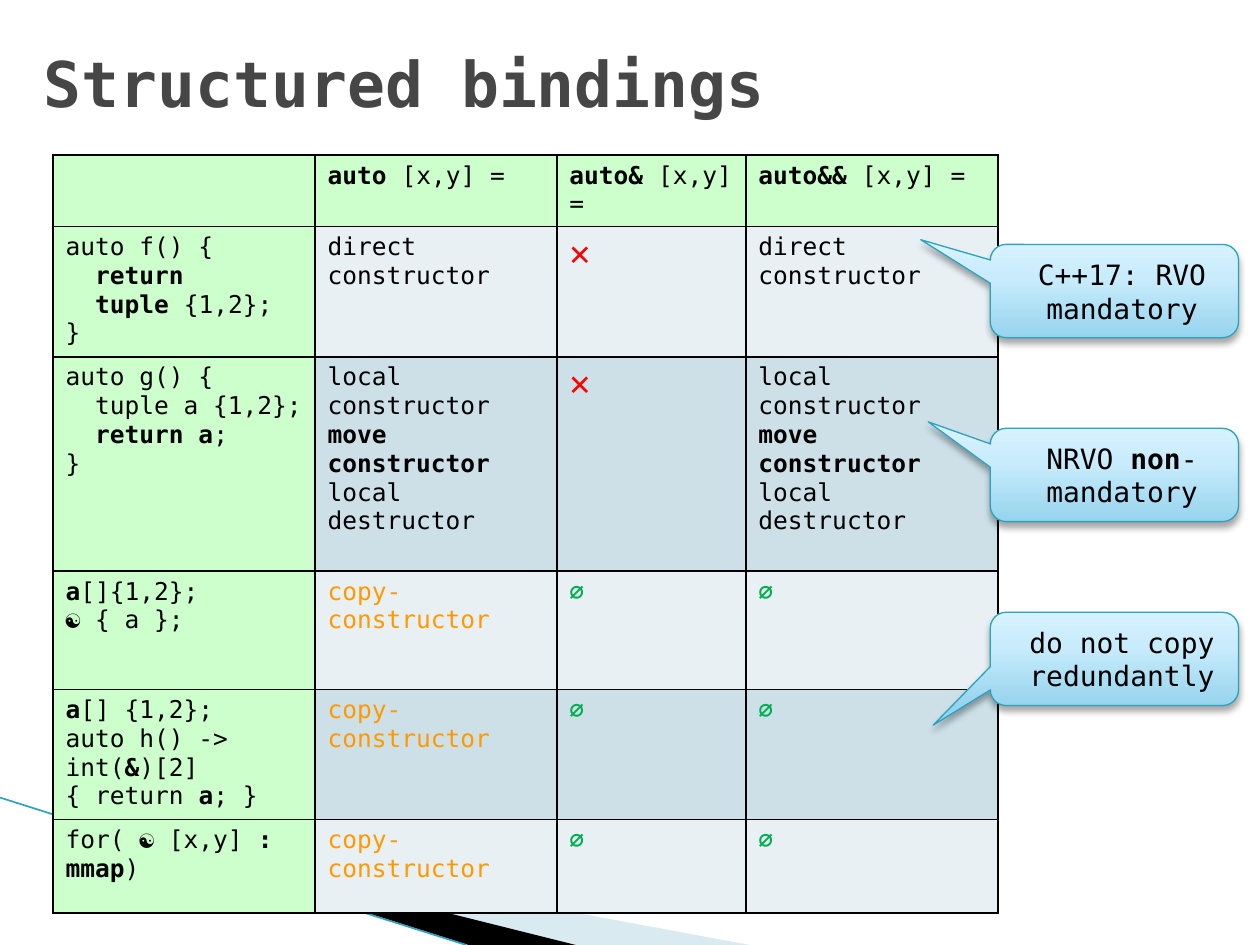
from dataclasses import dataclass

from lxml import etree
from pptx import Presentation
from pptx.dml.color import RGBColor as RGB
from pptx.enum.shapes import MSO_CONNECTOR as Link, MSO_SHAPE as Shape
from pptx.enum.text import MSO_ANCHOR as Anchor, PP_ALIGN as Align
from pptx.oxml import parse_xml
from pptx.oxml.ns import qn
from pptx.util import Inches, Pt

NS = 'xmlns:a="http://schemas.openxmlformats.org/drawingml/2006/main"'


@dataclass(frozen=True)
class Theme:
    face: str = "DejaVu Sans Mono"
    title: int = 36
    note: int = 16
    body: int = 14
    cross: int = 20
    black: str = "000000"
    gray: str = "464646"
    red: str = "FF0000"
    green: str = "00B050"
    orange: str = "FF9900"
    head: str = "CCFFCC"
    bands: tuple = ("E8F0F4", "CDE0E8")
    wave: str = "A0CBDC"
    rim: str = "2DA2BF"
    glow: tuple = ((0, "96D4EE"), (65, "C9ECFC"), (100, "D7F2FF"))


class Deck:
    def __init__(self, theme):
        self.theme = theme
        self.prs = Presentation()
        self.prs.slide_width, self.prs.slide_height = Inches(10), Inches(7.5)
        self.slide = self.prs.slides.add_slide(self.prs.slide_layouts[6])
        self.shapes = self.slide.shapes

    def label(self, frame, text, **form):
        """Fill a frame; *stars* mark bold, \\n a paragraph, \\v a line break."""
        base = {"name": self.theme.face, "size": Pt(self.theme.body)} | form
        tone = RGB.from_string(base.pop("tone", self.theme.black))
        for i, line in enumerate(text.split("\n")):
            para = frame.paragraphs[0] if i == 0 else frame.add_paragraph()
            for j, part in enumerate(line.split("*")):
                for k, piece in enumerate(part.split("\v")):
                    if k:
                        para.add_line_break()
                    if not piece:
                        continue
                    run = para.add_run()
                    run.text = piece
                    for key, val in ({"bold": j % 2 == 1} | base).items():
                        setattr(run.font, key, val)
                    run.font.color.rgb = tone

    def title(self, text, x, y, w, h):
        box = self.shapes.add_textbox(*map(Inches, (x, y, w, h)))
        frame = box.text_frame
        frame.word_wrap, frame.vertical_anchor = True, Anchor.MIDDLE
        self.label(frame, text, size=Pt(self.theme.title),
                   tone=self.theme.gray, bold=True)

    def patch(self, points, tone, alpha=100):
        """Draw a filled outline without a border."""
        spots = [(Inches(x), Inches(y)) for x, y in points]
        pen = self.shapes.build_freeform(*spots[0])
        pen.add_line_segments(spots[1:], close=True)
        shape = pen.convert_to_shape()
        shape.shadow.inherit = False
        shape.line.fill.background()
        shape.fill.solid()
        shape.fill.fore_color.rgb = RGB.from_string(tone)
        if alpha < 100:
            mark = shape._element.spPr.find(".//" + qn("a:srgbClr"))
            etree.SubElement(mark, qn("a:alpha"), val=str(alpha * 1000))

    def line(self, start, end, tone, width):
        link = self.shapes.add_connector(
            Link.STRAIGHT, *map(Inches, (*start, *end)))
        link.line.color.rgb = RGB.from_string(tone)
        link.line.width = Pt(width)
        etree.SubElement(link._element.spPr, qn("a:effectLst"))

    def rule(self, cell):
        """Put a thin border on each side of a cell."""
        props = cell._tc.get_or_add_tcPr()
        for side in "LRTB":
            props.append(parse_xml(
                f'<a:ln{side} {NS} w="12700"><a:solidFill>'
                f'<a:srgbClr val="{self.theme.black}"/></a:solidFill>'
                f'</a:ln{side}>'))

    def table(self, rows, x, y, wide, tall):
        """Draw rows of (text, format) cells with a tinted head row and column."""
        grid = self.shapes.add_table(
            len(tall), len(wide),
            *map(Inches, (x, y, sum(wide), sum(tall)))).table
        grid.first_row = grid.horz_banding = False
        for col, w in zip(grid.columns, wide):
            col.width = Inches(w)
        for r, (row, h) in enumerate(zip(rows, tall)):
            grid.rows[r].height = Inches(h)
            for c, (text, form) in enumerate(row):
                cell = grid.cell(r, c)
                self.rule(cell)
                cell.fill.solid()
                tint = self.theme.bands[(r - 1) % 2] if r and c else self.theme.head
                cell.fill.fore_color.rgb = RGB.from_string(tint)
                self.label(cell.text_frame, text, **form)

    def note(self, text, x, y, w, h, tip):
        """Draw a callout whose tail ends at tip, given in shares of its size."""
        shape = self.shapes.add_shape(
            Shape.ROUNDED_RECTANGULAR_CALLOUT, *map(Inches, (x, y, w, h)))
        for i, val in enumerate((*tip, 0.17)):
            shape.adjustments[i] = val
        shape.line.color.rgb = RGB.from_string(self.theme.rim)
        shape.line.width = Pt(0.75)
        shape.fill.gradient()
        shape.fill.gradient_angle = 90
        stops = shape._element.spPr.find(".//" + qn("a:gsLst"))
        for old in list(stops):
            stops.remove(old)
        for spot, tone in self.theme.glow:
            stop = etree.SubElement(stops, qn("a:gs"), pos=str(spot * 1000))
            etree.SubElement(stop, qn("a:srgbClr"), val=tone)
        shape._element.spPr.append(parse_xml(
            f'<a:effectLst {NS}><a:outerShdw blurRad="{Pt(4)}" dist="{Pt(3)}" '
            f'dir="5400000" rotWithShape="0"><a:srgbClr val="{self.theme.black}">'
            '<a:alpha val="35000"/></a:srgbClr></a:outerShdw></a:effectLst>'))
        frame = shape.text_frame
        frame.word_wrap, frame.vertical_anchor = True, Anchor.MIDDLE
        self.label(frame, text, size=Pt(self.theme.note))
        para = frame.paragraphs[0]
        para.alignment = Align.CENTER
        props = para._p.get_or_add_pPr()
        props.set("marL", str(Inches(0.12)))
        props.set("indent", "0")


def main():
    theme = Theme()
    deck = Deck(theme)

    deck.patch([(0.55, 6.5), (5.95, 7.5), (4.56, 7.5)], theme.wave, 40)
    deck.patch([(0.53, 6.49), (4.57, 7.5), (3.72, 7.5)], theme.black)
    deck.line((0, 6.33), (3.7, 7.5), theme.rim, 0.95)
    deck.title("Structured bindings", 0.25, 0.3, 9.58, 0.7)

    def plain(text):
        return text, {}

    cross = ("✕", {"size": Pt(theme.cross), "tone": theme.red})
    none = ("∅", {"tone": theme.green, "bold": True})
    dup = ("copy-constructor", {"tone": theme.orange})
    direct = plain("direct constructor")
    local = plain("local constructor\n*move constructor*\nlocal destructor")
    codes = (
        "auto f() {\n  *return\v  tuple *{1,2};\n}",
        "auto g() {\n  tuple a {1,2};\n  *return a*;\n}",
        "*a*[]{1,2};\n☯ { a };",
        "*a*[] {1,2};\nauto h() -> int(*&*)[2]\n{ return *a*; }",
        "for( ☯ [x,y] *: mmap*)",
    )
    fates = [(made, cross, made) for made in (direct, local)]
    fates += [(dup, none, none)] * 3
    forms = ("auto", "auto&", "auto&&")
    rows = [[plain("")] + [plain(f"*{form}* [x,y] =") for form in forms]]
    rows += [[plain(code), *fate] for code, fate in zip(codes, fates)]
    deck.table(rows, 0.42, 1.23, (2.08, 1.92, 1.5, 2),
               (0.56, 1.02, 1.7, 0.94, 1.02, 0.74))

    notes = (
        ("C++17: RVO mandatory", (-0.78, -0.55)),
        ("NRVO *non*-mandatory", (-0.75, -0.57)),
        ("do not copy redundantly", (-0.73, 0.71)),
    )
    for i, (text, tip) in enumerate(notes):
        deck.note(text, 7.86, 1.94 + 1.46 * i, 1.97, 0.74, tip)

    deck.prs.save("out.pptx")


if __name__ == "__main__":
    main()
